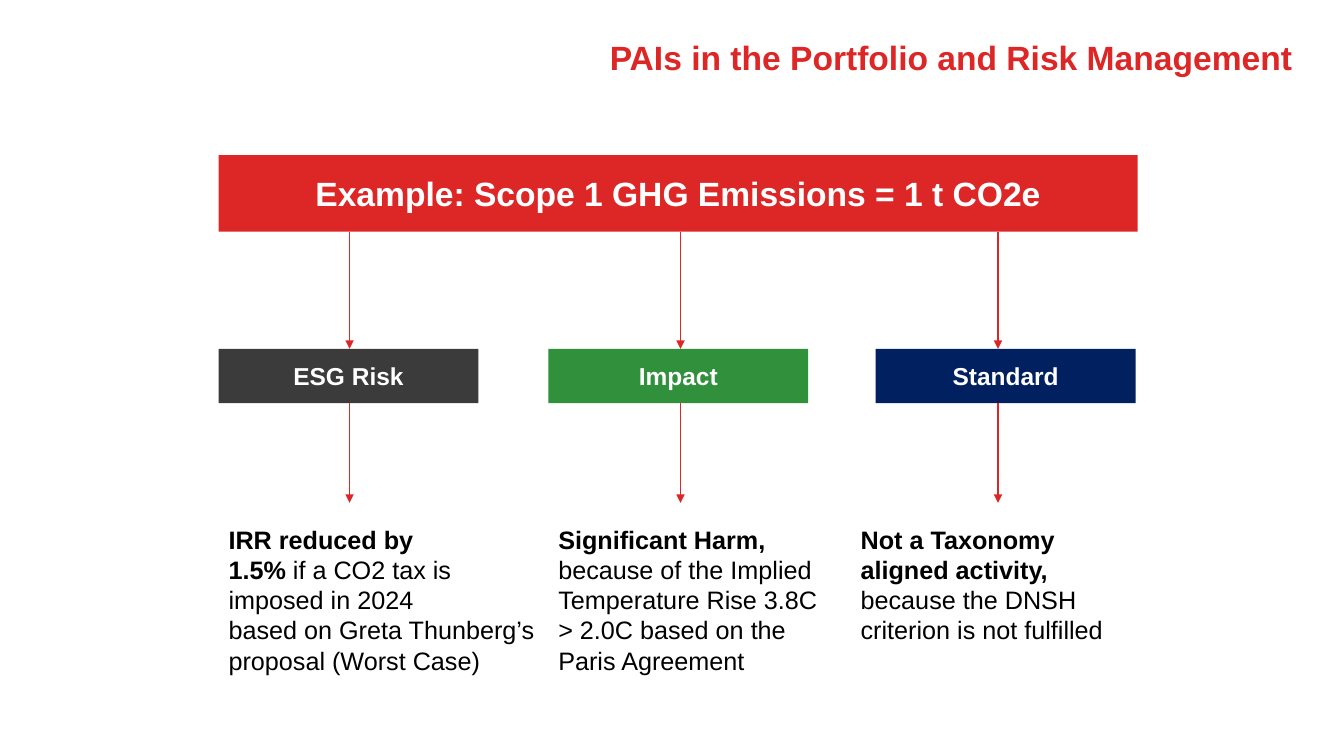
"""Build a slide tracing one emission figure to three portfolio outcomes."""
from dataclasses import dataclass

import lxml.etree
import pptx
import pptx.dml.color
import pptx.enum.shapes
import pptx.enum.text
import pptx.oxml.ns
import pptx.util

Cm = pptx.util.Cm
Align = pptx.enum.text.PP_ALIGN


@dataclass(frozen=True)
class Theme:
    font: str = "Arial"
    red: str = "DD2626"
    grey: str = "3B3B3B"
    green: str = "30903B"
    navy: str = "002060"
    white: str = "FFFFFF"
    black: str = "000000"
    head: float = 24
    label: float = 17.5
    body: float = 18
    line: float = 1


@dataclass(frozen=True)
class Box:
    left: float
    top: float
    width: float
    height: float


@dataclass(frozen=True)
class Claim:
    lead: str
    rest: str = ""


@dataclass(frozen=True)
class Branch:
    name: str
    fill: str
    left: float
    axis: float
    note: Box
    claims: tuple[Claim, ...]
    wrap: bool = True


THEME = Theme()
TITLE = Box(7.34, 0.81, 25.48, 1.32)
BANNER = Box(5.51, 3.91, 23.16, 1.93)
LABEL_TOP, LABEL_WIDE, LABEL_HIGH = 8.79, 6.55, 1.37
NOTE_TOP = 13.08
SPANS = (
    (BANNER.top + BANNER.height, LABEL_TOP),
    (LABEL_TOP + LABEL_HIGH, 12.67),
)
BRANCHES = (
    Branch("ESG Risk", THEME.grey, 5.51, 8.81, Box(5.51, NOTE_TOP, 8.28, 4.11),
           (Claim("IRR reduced by\n1.5% ",
                  "if a CO2 tax is \nimposed in 2024\n"
                  "based on Greta Thunberg’s\nproposal (Worst Case)"),), False),
    Branch("Impact", THEME.green, 13.82, 17.15, Box(13.82, NOTE_TOP, 7.42, 4.11),
           (Claim("Significant Harm, ",
                  "because of the Implied Temperature Rise 3.8C "
                  "> 2.0C based on the Paris Agreement"),)),
    Branch("Standard", THEME.navy, 22.07, 25.15, Box(21.44, NOTE_TOP, 7.42, 3.33),
           (Claim("Not a Taxonomy aligned activity,"),
            Claim("", "because the DNSH criterion is not fulfilled"))),
)


def place(box: Box) -> tuple[pptx.util.Length, ...]:
    """Give the box as slide lengths."""
    return Cm(box.left), Cm(box.top), Cm(box.width), Cm(box.height)


def paint(code: str) -> pptx.dml.color.RGBColor:
    """Turn a hex code into a colour."""
    return pptx.dml.color.RGBColor.from_string(code)


def style(run, size: float, tint: str, bold: bool) -> None:
    """Set the font of one run."""
    run.font.name = THEME.font
    run.font.size = pptx.util.Pt(size)
    run.font.color.rgb = paint(tint)
    run.font.bold = bold


def write(frame, text: str, size: float, tint: str, align: Align) -> None:
    """Fill a frame with one bold line."""
    frame.word_wrap = True
    frame.text = text
    line = frame.paragraphs[0]
    line.alignment = align
    style(line.runs[0], size, tint, True)


def draw_bar(slide, box: Box, text: str, fill: str, size: float) -> None:
    """Draw a filled bar with a centred label."""
    bar = slide.shapes.add_shape(
        pptx.enum.shapes.MSO_SHAPE.RECTANGLE, *place(box))
    bar.shadow.inherit = False
    bar.fill.solid()
    bar.fill.fore_color.rgb = paint(fill)
    bar.line.fill.background()
    bar.text_frame.vertical_anchor = pptx.enum.text.MSO_ANCHOR.MIDDLE
    write(bar.text_frame, text, size, THEME.white, Align.CENTER)


def draw_arrow(slide, axis: float, start: float, end: float) -> None:
    """Draw an arrow straight down."""
    arrow = slide.shapes.add_connector(
        pptx.enum.shapes.MSO_CONNECTOR.STRAIGHT,
        Cm(axis), Cm(start), Cm(axis), Cm(end))
    arrow.line.color.rgb = paint(THEME.red)
    arrow.line.width = pptx.util.Pt(THEME.line)
    name = pptx.oxml.ns.qn
    shape = arrow._element.spPr
    stroke = shape.find(name("a:ln"))
    lxml.etree.SubElement(stroke, name("a:tailEnd"), type="triangle")
    lxml.etree.SubElement(shape, name("a:effectLst"))


def draw_note(slide, branch: Branch) -> None:
    """Write a note with bold leads and plain text."""
    frame = slide.shapes.add_textbox(*place(branch.note)).text_frame
    frame.word_wrap = branch.wrap
    frame.auto_size = pptx.enum.text.MSO_AUTO_SIZE.SHAPE_TO_FIT_TEXT
    frame.text = "\n".join(claim.lead.replace("\n", "\v") for claim in branch.claims)
    for line, claim in zip(frame.paragraphs, branch.claims):
        line.alignment = Align.LEFT
        for run in line.runs:
            style(run, THEME.body, THEME.black, True)
        for step, text in enumerate(claim.rest.split("\n") if claim.rest else ()):
            if step:
                line.add_line_break()
            run = line.add_run()
            run.text = text
            style(run, THEME.body, THEME.black, False)


def main() -> None:
    """Build and save the slide."""
    deck = pptx.Presentation()
    deck.slide_width, deck.slide_height = Cm(33.87), Cm(19.05)
    slide = deck.slides.add_slide(deck.slide_layouts[6])
    title = slide.shapes.add_textbox(*place(TITLE))
    write(title.text_frame, "PAIs in the Portfolio and Risk Management",
          THEME.head, THEME.red, Align.RIGHT)
    draw_bar(slide, BANNER, "Example: Scope 1 GHG Emissions = 1 t CO2e",
             THEME.red, THEME.head)
    for branch in BRANCHES:
        label = Box(branch.left, LABEL_TOP, LABEL_WIDE, LABEL_HIGH)
        draw_bar(slide, label, branch.name, branch.fill, THEME.label)
        for start, end in SPANS:
            draw_arrow(slide, branch.axis, start, end)
        draw_note(slide, branch)
    deck.save("out.pptx")


if __name__ == "__main__":
    main()
